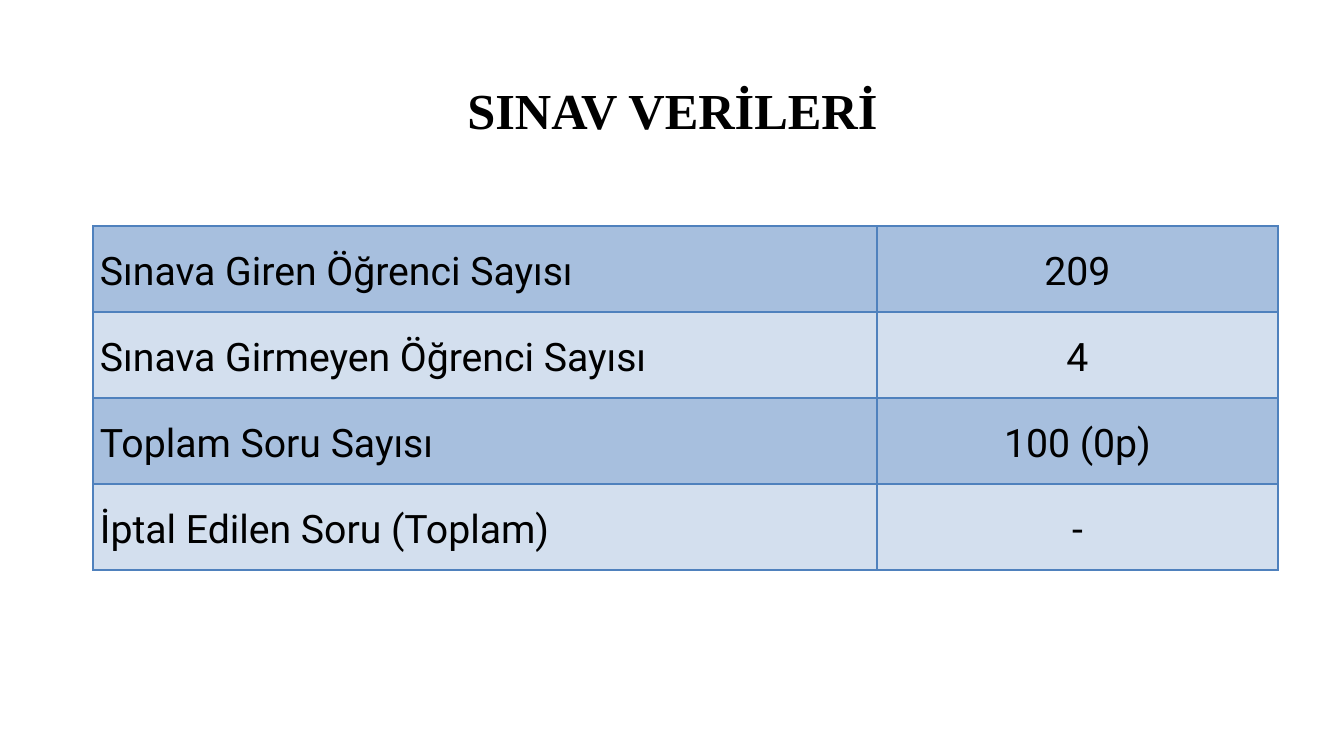
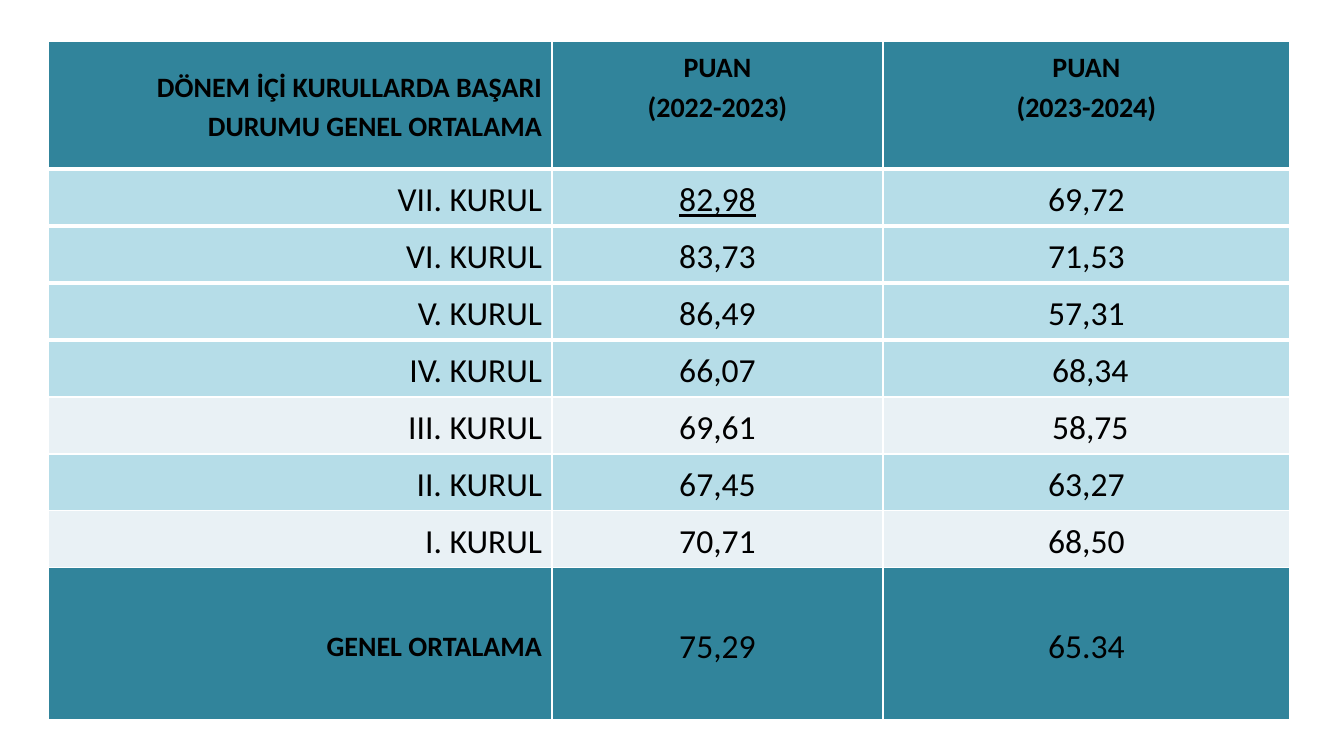
from dataclasses import dataclass

from lxml import etree
from pptx import Presentation, util as u
from pptx.dml.color import RGBColor
from pptx.enum import text as t
from pptx.oxml.ns import qn

SCALE = 914400 / 100.8
LEFT, MID, RIGHT = t.PP_ALIGN.LEFT, t.PP_ALIGN.CENTER, t.PP_ALIGN.RIGHT


@dataclass(frozen=True)
class Theme:
    ink: str = "000000"
    white: str = "FFFFFF"
    edge: str = "4F81BD"
    blue: str = "A7BFDE"
    pale: str = "D3DFEE"
    teal: str = "31849B"
    aqua: str = "B6DDE8"
    mist: str = "E9F1F5"
    serif: str = "Times New Roman"
    sans: str = "Roboto"
    body: str = "Calibri"
    title: int = 36
    large: int = 28
    value: int = 24
    label: int = 20


THEME = Theme()


@dataclass
class Style:
    """Look of one table cell; pad is left, top, right, bottom in px."""
    fill: str
    font: str
    size: int
    align: int
    pad: tuple
    edge: str
    top: int = 1
    base: int = 1
    bold: bool = False
    under: bool = False


def px(n):
    return u.Emu(round(n * SCALE))


def write(frame, words, font, size, align, gap, bold=False, under=False):
    """Fill a text frame, one paragraph for each line of words."""
    frame.word_wrap = True
    for i, line in enumerate(words.split("\n")):
        para = frame.add_paragraph() if i else frame.paragraphs[0]
        para.alignment = align
        para.line_spacing = gap
        run = para.add_run()
        run.text = line
        face = run.font
        face.name, face.size = font, u.Pt(size)
        face.bold, face.underline = bold, under
        face.color.rgb = RGBColor.from_string(THEME.ink)


def add_title(slide, words, box):
    frame = slide.shapes.add_textbox(*map(px, box)).text_frame
    frame.vertical_anchor = t.MSO_ANCHOR.MIDDLE
    write(frame, words, THEME.serif, THEME.title, MID, 0.9, bold=True)


def add_edges(cell, style):
    props = cell._tc.get_or_add_tcPr()
    widths = {"L": 1, "R": 1, "T": style.top, "B": style.base}
    for side, width in widths.items():
        line = etree.SubElement(props, qn("a:ln" + side), w=str(u.Pt(width)))
        fill = etree.SubElement(line, qn("a:solidFill"))
        etree.SubElement(fill, qn("a:srgbClr"), val=style.edge)


def fill_cell(cell, words, style):
    add_edges(cell, style)
    cell.fill.solid()
    cell.fill.fore_color.rgb = RGBColor.from_string(style.fill)
    cell.vertical_anchor = t.MSO_ANCHOR.MIDDLE
    (cell.margin_left, cell.margin_top,
     cell.margin_right, cell.margin_bottom) = map(px, style.pad)
    write(cell.text_frame, words, style.font, style.size, style.align,
          1.15, style.bold, style.under)


def add_grid(slide, spot, cols, rows, data, pick):
    """Add a table; pick(row, col) gives the style of each cell."""
    size = sum(cols), sum(rows)
    table = slide.shapes.add_table(
        len(rows), len(cols), *map(px, spot + size)).table
    table.first_row = table.horz_banding = False
    for col, width in zip(table.columns, cols):
        col.width = px(width)
    for row, height in zip(table.rows, rows):
        row.height = px(height)
    for r, line in enumerate(data):
        for c, words in enumerate(line):
            fill_cell(table.cell(r, c), words, pick(r, c))


def exam_style(r, c):
    return Style(THEME.pale if r % 2 else THEME.blue, THEME.sans, THEME.large,
                 MID if c else LEFT, (7, 0, 7, 0), THEME.edge)


def score_style(r, c):
    head, total = r == 0, r == 8
    if head or total:
        fill = THEME.teal
    else:
        fill = THEME.mist if r in (5, 7) else THEME.aqua
    bold = head or (total and c == 0)
    pad = (0, 0, 0, 0) if c == 2 else (10, 5, 10, 5)
    if head and c:
        pad = (0, 0, 0, 39)
    return Style(fill, THEME.body, THEME.label if bold else THEME.value,
                 MID if c else RIGHT, pad, THEME.white,
                 top=3 if 1 <= r <= 4 else 1, base=3 if r <= 3 else 1,
                 bold=bold, under=(r, c) == (1, 1))


def exam_slide(slide):
    add_title(slide, "SINAV VERİLERİ", (93, 40, 1159, 146))
    data = [("Sınava Giren Öğrenci Sayısı", "209"),
            ("Sınava Girmeyen Öğrenci Sayısı", "4"),
            ("Toplam Soru Sayısı", "100 (0p)"),
            ("İptal Edilen Soru (Toplam)", "-")]
    add_grid(slide, (93, 226), (784, 401), (86,) * 4, data, exam_style)


def score_slide(slide):
    data = [("DÖNEM İÇİ KURULLARDA BAŞARI DURUMU GENEL ORTALAMA",
             "PUAN\n(2022-2023)", "PUAN\n(2023-2024)"),
            ("VII. KURUL", "82,98", "69,72"),
            ("VI. KURUL", "83,73", "71,53"),
            ("V. KURUL", "86,49", "57,31"),
            ("IV. KURUL", "66,07", " 68,34"),
            ("III. KURUL", "69,61", " 58,75"),
            ("II. KURUL", "67,45", "63,27"),
            ("I. KURUL", "70,71", "68,50"),
            ("GENEL ORTALAMA", "75,29", "65.34")]
    rows = (128,) + (57,) * 7 + (152,)
    add_grid(slide, (48, 41), (504, 331, 407), rows, data, score_style)


def main():
    deck = Presentation()
    deck.slide_width, deck.slide_height = px(1344), px(756)
    for build in (exam_slide, score_slide):
        build(deck.slides.add_slide(deck.slide_layouts[6]))
    deck.save("out.pptx")


if __name__ == "__main__":
    main()
